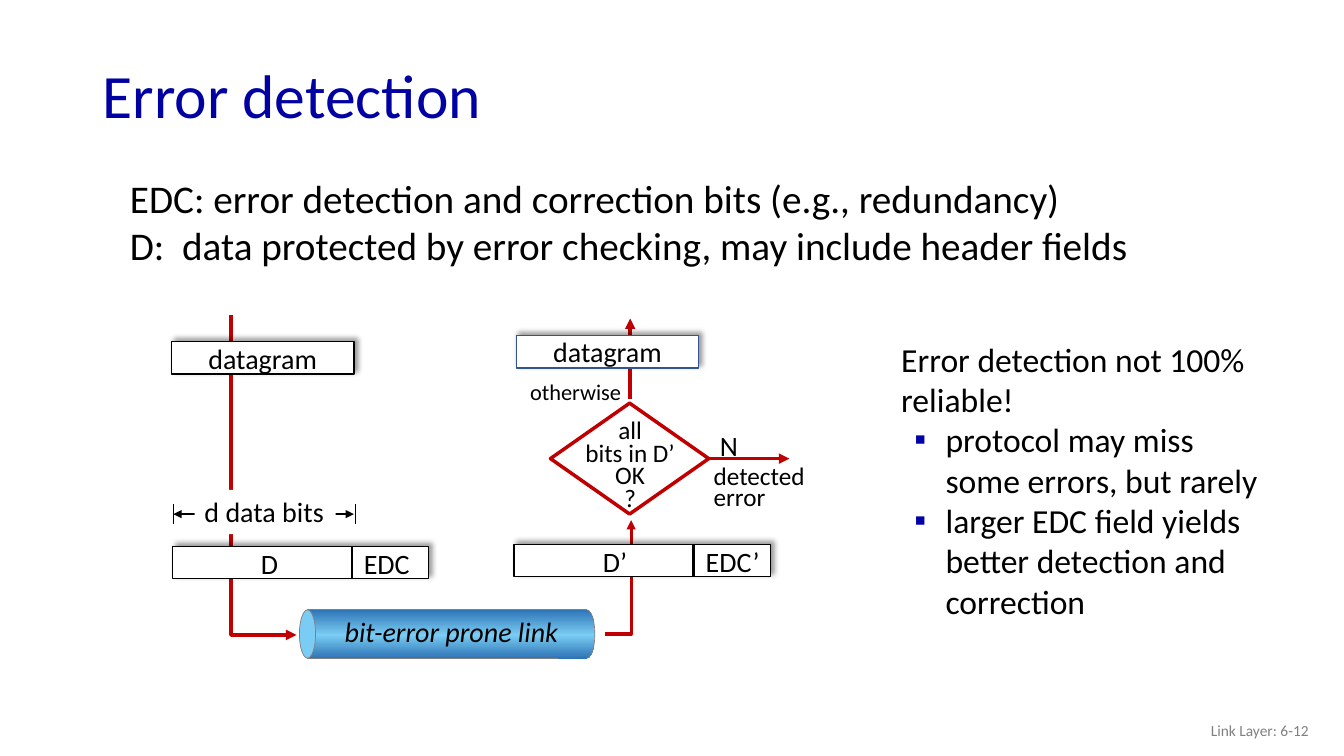
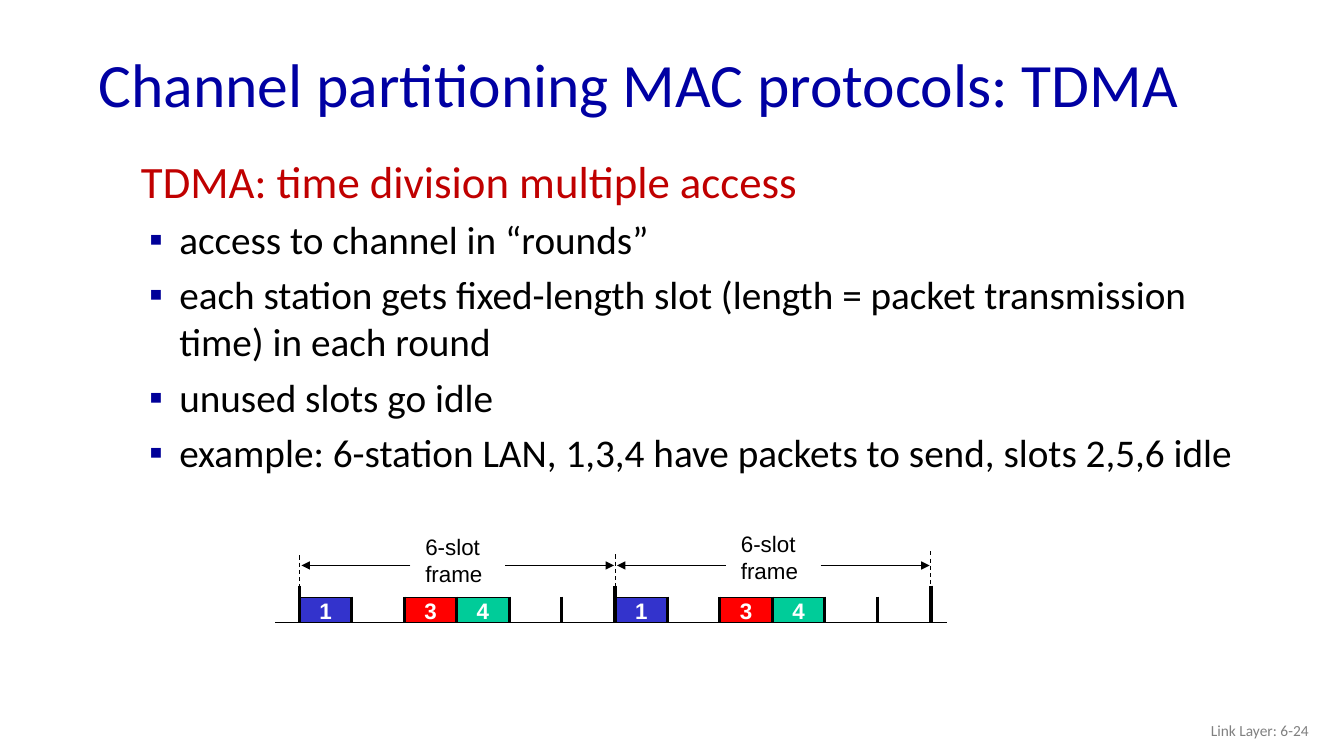
from copy import deepcopy

from lxml.etree import SubElement
from pptx import Presentation
from pptx.dml.color import RGBColor
from pptx.enum.dml import MSO_LINE
from pptx.enum.shapes import MSO_CONNECTOR, MSO_SHAPE
from pptx.enum.text import MSO_ANCHOR, MSO_AUTO_SIZE, PP_ALIGN
from pptx.oxml.ns import qn
from pptx.util import Inches, Pt

# Shared look
BLACK, WHITE = "000000", "FFFFFF"
NAVY, RED, GRAY = "0000A3", "C00000", "808080"
PIPE_DARK, PIPE_LIGHT = "2E75B6", "7ACCF4"
BODY_FONT, DIAGRAM_FONT = "Calibri", "Arial"


def rgb(value):
    return RGBColor.from_string(value)


def inches(values):
    return [Inches(value) for value in values]


# Text
def add_run(paragraph, text, size, color=BLACK, font=BODY_FONT, bold=False, italic=False):
    run = paragraph.add_run()
    run.text = text
    run.font.size = Pt(size)
    run.font.name = font
    run.font.bold = bold
    run.font.italic = italic
    run.font.color.rgb = rgb(color)


def next_paragraph(frame):
    first = frame.paragraphs[0]
    return frame.add_paragraph() if first.runs else first


def write_lines(frame, lines, size, align=PP_ALIGN.LEFT, spacing=None, **look):
    for line in lines:
        paragraph = next_paragraph(frame)
        paragraph.alignment = align
        if spacing:
            paragraph.line_spacing = spacing
        add_run(paragraph, line, size, **look)


def write_bullets(frame, lines, size, margin, hanging, bullet_color, space_before=0):
    for line in lines:
        paragraph = next_paragraph(frame)
        paragraph.space_before = Pt(space_before)
        properties = paragraph._p.get_or_add_pPr()
        properties.set("marL", str(Inches(margin)))
        properties.set("indent", str(-Inches(hanging)))
        color = SubElement(properties, qn("a:buClr"))
        SubElement(color, qn("a:srgbClr"), val=bullet_color)
        SubElement(properties, qn("a:buFont"), typeface=DIAGRAM_FONT)
        SubElement(properties, qn("a:buChar"), char="▪")
        add_run(paragraph, line, size)


def add_text_box(slide, box, anchor=MSO_ANCHOR.TOP):
    shape = slide.shapes.add_textbox(*inches(box))
    shape.text_frame.word_wrap = True
    shape.text_frame.vertical_anchor = anchor
    return shape


def add_label(slide, box, lines, size=20, fill=None, **look):
    """Unwrapped diagram text that sizes its own box."""
    shape = add_text_box(slide, box)
    shape.text_frame.word_wrap = False
    shape.text_frame.auto_size = MSO_AUTO_SIZE.SHAPE_TO_FIT_TEXT
    if fill:
        shape.fill.solid()
        shape.fill.fore_color.rgb = rgb(fill)
    write_lines(shape.text_frame, lines, size, **look)


# Shapes and lines
def set_line(line, color, width):
    if color is None:
        line.fill.background()
    else:
        line.color.rgb = rgb(color)
        line.width = Pt(width)


def add_arrowheads(shape, ends):
    for end in ends:
        SubElement(shape.line._get_or_add_ln(), qn(f"a:{end}"), type="triangle")


def add_block(slide, kind, box, fill, line=None, width=1.0):
    shape = slide.shapes.add_shape(kind, *inches(box))
    shape.shadow.inherit = False
    shape.fill.solid()
    shape.fill.fore_color.rgb = rgb(fill)
    set_line(shape.line, line, width)
    return shape


def write_in_block(shape, text, size, **look):
    frame = shape.text_frame
    frame.margin_left = frame.margin_right = frame.margin_top = frame.margin_bottom = 0
    frame.word_wrap = False
    frame.vertical_anchor = MSO_ANCHOR.MIDDLE
    write_lines(frame, [text], size, align=PP_ALIGN.CENTER, **look)


def add_shadow(shape):
    effects = shape._element.spPr.find(qn("a:effectLst"))
    shadow = SubElement(effects, qn("a:outerShdw"), blurRad=str(Pt(4)), dist=str(Pt(3)),
                        dir=str(315 * 60000), algn="bl", rotWithShape="0")
    color = SubElement(shadow, qn("a:srgbClr"), val=BLACK)
    SubElement(color, qn("a:alpha"), val="40000")


def add_line(slide, start, end, color=BLACK, width=0.75, ends=(), dashed=False):
    connector = slide.shapes.add_connector(MSO_CONNECTOR.STRAIGHT, *inches(start + end))
    set_line(connector.line, color, width)
    if dashed:
        connector.line.dash_style = MSO_LINE.DASH
    add_arrowheads(connector, ends)
    SubElement(connector._element.spPr, qn("a:effectLst"))
    return connector


def add_bent_arrow(slide, points, width):
    start, *others = [inches(point) for point in points]
    builder = slide.shapes.build_freeform(*start)
    builder.add_line_segments(others, close=False)
    shape = builder.convert_to_shape()
    shape.shadow.inherit = False
    shape.fill.background()
    set_line(shape.line, RED, width)
    add_arrowheads(shape, ["tailEnd"])


# Parts of the error detection diagram
def add_datagram(slide, left, top, line):
    shape = add_block(slide, MSO_SHAPE.RECTANGLE, (left, top, 1.81, 0.32), WHITE, line)
    add_shadow(shape)
    write_in_block(shape, "datagram", 20)


def add_protected_data(slide, left, top, data, data_width, check_bits, check_width):
    shape = add_block(slide, MSO_SHAPE.RECTANGLE, (left, top, 2.54, 0.32), WHITE, BLACK)
    add_shadow(shape)
    add_label(slide, (left + 0.78, top - 0.05, data_width, 0.44), [data])
    add_label(slide, (left + 1.8, top - 0.05, check_width, 0.44), [check_bits])
    divider = left + 1.78
    add_line(slide, (divider, top), (divider, top + 0.32), width=1.75)


def add_pipe_part(slide, kind, left, width, line=None):
    shape = add_block(slide, kind, (left, 6.05, width, 0.48), PIPE_LIGHT, line, 0.5)
    shape.fill.gradient()
    shape.fill.gradient_angle = 270
    stop_list = shape._element.spPr.find(qn("a:gradFill")).find(qn("a:gsLst"))
    stop_list.append(deepcopy(stop_list[0]))
    stops = zip(shape.fill.gradient_stops, (0, 0.52, 1), (PIPE_DARK, PIPE_LIGHT, PIPE_DARK))
    for stop, position, color in stops:
        stop.position = position
        stop.color.rgb = rgb(color)


def add_link(slide):
    add_pipe_part(slide, MSO_SHAPE.RECTANGLE, 3.05, 2.77, GRAY)
    add_block(slide, MSO_SHAPE.OVAL, (2.97, 6.05, 0.16, 0.48), PIPE_LIGHT, GRAY, 0.5)
    add_pipe_part(slide, MSO_SHAPE.OVAL, 5.74, 0.16, GRAY)
    add_pipe_part(slide, MSO_SHAPE.RECTANGLE, 5.53, 0.29)
    add_label(slide, (3.32, 6.05, 2.34, 0.44), ["bit-error prone link"], italic=True)


def add_sender(slide):
    add_bent_arrow(slide, [(2.29, 3.13), (2.29, 6.3), (2.94, 6.3)], 2.5)
    add_datagram(slide, 1.7, 3.39, BLACK)
    add_protected_data(slide, 1.71, 5.42, "D", 0.4, "EDC", 0.7)
    add_line(slide, (1.72, 5.1), (3.51, 5.1), width=1.75, ends=["headEnd", "tailEnd"])
    add_label(slide, (1.93, 4.86, 1.4, 0.44), ["d data bits"], fill=WHITE)
    for edge in (1.72, 3.52):
        add_line(slide, (edge, 5), (edge, 5.2), width=0.5)


def add_receiver(slide):
    add_bent_arrow(slide, [(6, 6.29), (6.26, 6.29), (6.26, 5.16)], 2.25)
    add_protected_data(slide, 5.1, 5.4, "D’", 0.48, "EDC’", 0.78)

    # Decision
    decision = add_block(slide, MSO_SHAPE.DIAMOND, (5.46, 4, 1.57, 1.1), WHITE, RED, 2.5)
    add_label(slide, (5.7, 4.13, 1.1, 1.02), ["all", "bits in D’", "OK", "?"], 18,
              align=PP_ALIGN.CENTER, spacing=0.75)
    add_label(slide, (7.04, 4.2, 0.38, 0.44), ["N"])
    add_label(slide, (6.98, 4.6, 1.17, 0.54), ["detected", "error"], 18, spacing=0.7)
    error_arrow = add_line(slide, (7.03, 4.55), (7.83, 4.55), RED, 2.5, ["tailEnd"])
    error_arrow.begin_connect(decision, 3)

    # Delivery
    add_line(slide, (6.25, 3.96), (6.25, 3.16), RED, 2.5, ["tailEnd"])
    add_label(slide, (5.16, 3.78, 1.12, 0.3), ["otherwise"], 16, spacing=0.7)
    add_datagram(slide, 5.12, 3.33, "325491")


# Part of the TDMA diagram
def add_timeline(slide):
    baseline, slot_top, slot_width, frame_width = 6.18, 5.93, 0.52, 3.13
    busy_slots = [(0, "1", "3333CC"), (2, "3", "FF0000"), (3, "4", "00CC99")]
    add_line(slide, (2.73, baseline), (9.39, baseline))

    for frame_left, label_top in ((2.97, 5.24), (6.1, 5.21)):
        for slot, station, color in busy_slots:
            box = (frame_left + slot * slot_width, slot_top, slot_width, baseline - slot_top)
            shape = add_block(slide, MSO_SHAPE.RECTANGLE, box, color, BLACK, 0.75)
            write_in_block(shape, station, 16, color=WHITE, font=DIAGRAM_FONT, bold=True)
        for slot in range(1, 6):
            tick = frame_left + slot * slot_width
            add_line(slide, (tick, 5.92), (tick, baseline), width=2.25)
        add_label(slide, (frame_left + 1.15, label_top, 0.77, 0.64), ["6-slot", "frame"], 16,
                  font=DIAGRAM_FONT)
        for start, end in ((2.04, 3.12), (1.1, 0.02)):
            add_line(slide, (frame_left + start, 5.61), (frame_left + end, 5.61),
                     ends=["tailEnd"])

    # Frame boundaries
    for index, (dash_top, weight) in enumerate(((5.51, 2.25), (5.5, 3), (5.47, 3))):
        edge = 2.97 + index * frame_width
        add_line(slide, (edge, dash_top), (edge, dash_top + 0.33), dashed=True)
        add_line(slide, (edge, 5.81), (edge, baseline), width=weight)


# Slides
def new_slide(presentation, title, title_left, title_top, number):
    slide = presentation.slides.add_slide(presentation.slide_layouts[6])
    heading = add_text_box(slide, (title_left, title_top, 11.5, 0.98), MSO_ANCHOR.MIDDLE)
    write_lines(heading.text_frame, [title], 44, spacing=0.9, color=NAVY)
    footer = add_text_box(slide, (10.08, 7.05, 3, 0.4), MSO_ANCHOR.MIDDLE)
    write_lines(footer.text_frame, [f"Link Layer: 6-{number}"], 11, PP_ALIGN.RIGHT, color=GRAY)
    return slide


def add_error_detection_slide(presentation):
    slide = new_slide(presentation, "Error detection", 0.92, 0.49, 12)
    definitions = add_text_box(slide, (1.19, 1.68, 10.79, 1.04))
    write_lines(definitions.text_frame, [
        "EDC: error detection and correction bits (e.g., redundancy)",
        "D:  data protected by error checking, may include header fields",
    ], 28)
    remarks = add_text_box(slide, (8.84, 3.31, 3.77, 2.93)).text_frame
    write_lines(remarks, ["Error detection not 100% reliable!"], 24)
    write_bullets(remarks, [
        "protocol may miss some errors, but rarely",
        "larger EDC field yields better detection and correction",
    ], 24, 0.44, 0.31, "0000A8")
    add_sender(slide)
    add_link(slide)
    add_receiver(slide)


def add_tdma_slide(presentation):
    slide = new_slide(presentation, "Channel partitioning MAC protocols: TDMA", 0.88, 0.38, 24)
    body = add_text_box(slide, (1.3, 1.6, 11.19, 3.2)).text_frame
    write_lines(body, ["TDMA: time division multiple access"], 32, spacing=0.75, color=RED)
    body.paragraphs[0].space_before = Pt(6)
    write_bullets(body, [
        "access to channel in “rounds”",
        "each station gets fixed-length slot (length = packet transmission time) in each round",
        "unused slots go idle",
        "example: 6-station LAN, 1,3,4 have packets to send, slots 2,5,6 idle",
    ], 28, 0.38, 0.3, "000099", space_before=6)
    add_timeline(slide)


def main():
    presentation = Presentation()
    presentation.slide_width, presentation.slide_height = inches((13.33, 7.5))
    add_error_detection_slide(presentation)
    add_tdma_slide(presentation)
    presentation.save("out.pptx")


if __name__ == "__main__":
    main()
